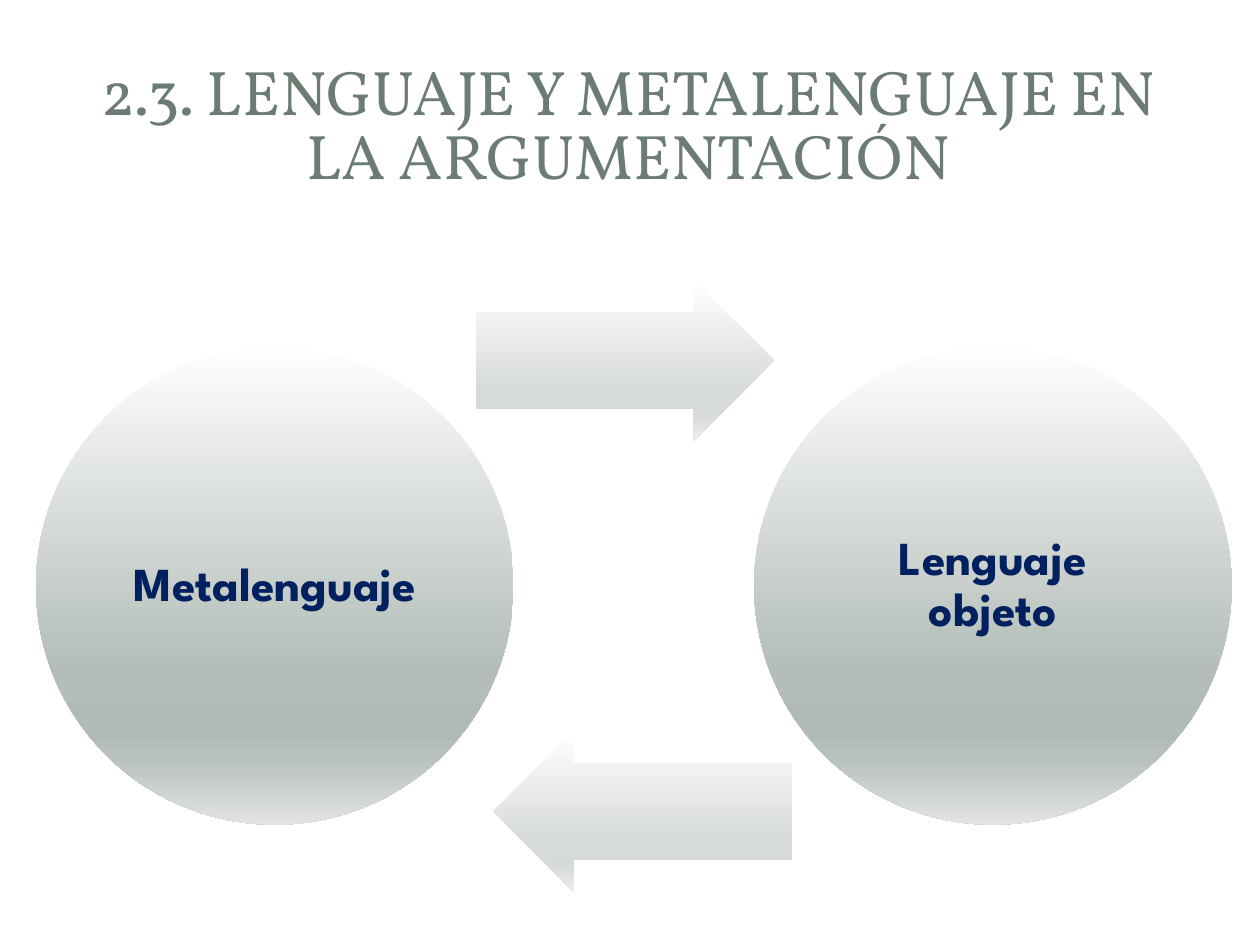
from dataclasses import dataclass

from lxml.etree import SubElement
from pptx import Presentation
from pptx.dml.color import RGBColor
from pptx.enum.shapes import MSO_SHAPE
from pptx.enum.text import MSO_ANCHOR, MSO_AUTO_SIZE, PP_ALIGN
from pptx.oxml.ns import qn
from pptx.util import Inches, Pt


@dataclass(frozen=True)
class Theme:
    title_font: str = "Vollkorn"
    label_font: str = "League Spartan"
    title_size: int = 36
    label_size: int = 27
    title_color: str = "6B7D72"
    label_color: str = "002060"
    circle_gradient: tuple = ((0, "FEFEFE"), (68, "B4BDB7"), (81, "B1BBB5"),
                              (86, "B9C1BC"), (100, "E1E4E2"))
    arrow_gradient: tuple = ((0, "FFFFFF"), (68, "D6DAD8"), (81, "D5D9D7"),
                             (86, "D8DDDA"), (100, "EEEFEE"))


THEME = Theme()
TITLE = "2.3. LENGUAJE Y METALENGUAJE EN LA ARGUMENTACIÓN"
CONCEPTS = ["Metalenguaje", "Lenguaje objeto"]
ARROWS = [(MSO_SHAPE.RIGHT_ARROW, -1), (MSO_SHAPE.LEFT_ARROW, 1)]

WIDTH, HEIGHT = 10, 7.5
CYCLE_X, CYCLE_Y = 5.03, 4.65
CIRCLE = 0.379 * WIDTH
CIRCLE_PITCH = 0.57 * WIDTH
ARROW_W, ARROW_H = 0.237 * WIDTH, 0.17 * HEIGHT
ARROW_SHIFT, ARROW_RISE = 0.07, 1.79


def style(frame, font, size, color, bold, spacing):
    frame.word_wrap = True
    frame.auto_size = MSO_AUTO_SIZE.NONE
    frame.vertical_anchor = MSO_ANCHOR.MIDDLE
    paragraph = frame.paragraphs[0]
    paragraph.alignment = PP_ALIGN.CENTER
    paragraph.line_spacing = spacing
    paragraph.font.name = font
    paragraph.font.size = Pt(size)
    paragraph.font.bold = bold
    paragraph.font.color.rgb = RGBColor.from_string(color)


def fill_gradient(shape, stops):
    shape.fill.gradient()
    shape.fill.gradient_angle = 270
    stop_list = shape._element.spPr.find(qn("a:gradFill")).find(qn("a:gsLst"))
    for old_stop in list(stop_list):
        stop_list.remove(old_stop)
    for position, color in stops:
        stop = SubElement(stop_list, qn("a:gs"), pos=str(position * 1000))
        SubElement(stop, qn("a:srgbClr"), val=color)


def add_centered(slide, kind, x, y, width, height, gradient):
    shape = slide.shapes.add_shape(
        kind, Inches(x - width / 2), Inches(y - height / 2),
        Inches(width), Inches(height))
    shape.shadow.inherit = False
    shape.line.fill.background()
    fill_gradient(shape, gradient)
    return shape


def main():
    deck = Presentation()
    deck.slide_width, deck.slide_height = Inches(WIDTH), Inches(HEIGHT)
    slide = deck.slides.add_slide(deck.slide_layouts[5])

    title = slide.shapes.title
    title.left, title.top = Inches(0.47), Inches(0.45)
    title.width, title.height = Inches(9.03), Inches(1.14)
    title.text_frame.text = TITLE
    style(title.text_frame, THEME.title_font, THEME.title_size,
          THEME.title_color, False, 0.85)

    for index, concept in enumerate(CONCEPTS):
        x = CYCLE_X + (index - 0.5) * CIRCLE_PITCH
        circle = add_centered(slide, MSO_SHAPE.OVAL, x, CYCLE_Y,
                              CIRCLE, CIRCLE, THEME.circle_gradient)
        circle.text_frame.text = concept
        style(circle.text_frame, THEME.label_font, THEME.label_size,
              THEME.label_color, True, 0.9)

    for kind, side in ARROWS:
        arrow = add_centered(slide, kind, CYCLE_X + side * ARROW_SHIFT,
                             CYCLE_Y + side * ARROW_RISE,
                             ARROW_W, ARROW_H, THEME.arrow_gradient)
        arrow.adjustments[0] = 0.6
        arrow.adjustments[1] = 0.5

    deck.save("out.pptx")


if __name__ == "__main__":
    main()
